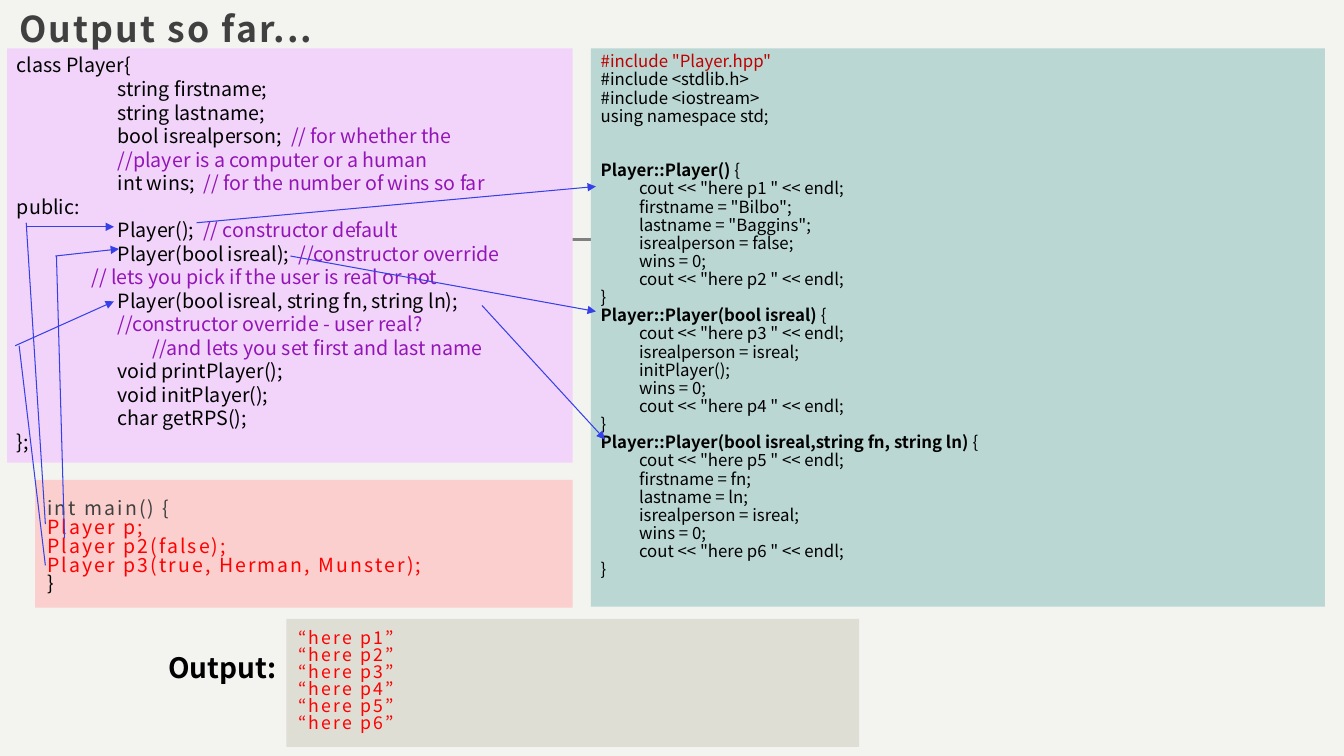
"""Build the slide that traces constructor calls to their output."""
from lxml.etree import SubElement
from pptx import Presentation
from pptx.dml.color import RGBColor
from pptx.enum.shapes import MSO_CONNECTOR, MSO_SHAPE
from pptx.enum.text import MSO_ANCHOR, PP_ALIGN
from pptx.oxml.ns import qn
from pptx.util import Inches, Pt

FONT = "Noto Sans CJK JP"
BLACK, GREY, RED, DARK_RED = "000000", "404040", "FF0000", "C00000"
PURPLE, BLUE = "9315B7", "3540E8"
ROOMY = (0.12, 0.12, 0.12, 0.1)
SNUG = (0.1, 0.05, 0.1, 0.05)

HEADER_LINES = [
    (0, "class Player{", ""),
    (1, "string firstname;", ""),
    (1, "string lastname;", ""),
    (1, "bool isrealperson;  ", "// for whether the"),
    (1, "", "//player is a computer or a human"),
    (1, "int wins;  ", "// for the number of wins so far"),
    (0, "public:", ""),
    (1, "Player();  ", "// constructor default"),
    (1, "Player(bool isreal);  ", "//constructor override"),
    (0.74, "", "// lets you pick if the user is real or not"),
    (1, "Player(bool isreal, string fn, string ln);", ""),
    (1, "", "//constructor override - user real?"),
    (1.34, "", "//and lets you set first and last name"),
    (1, "void printPlayer();", ""),
    (1, "void initPlayer();", ""),
    (1, "char getRPS();", ""),
    (0, "};", ""),
]
INCLUDES = ['#include "Player.hpp"', "#include <stdlib.h>", "#include <iostream>", "using namespace std;"]
CONSTRUCTORS = [
    ("Player::Player() ", [
        'cout << "here p1 " << endl;', 'firstname = "Bilbo";', 'lastname = "Baggins";',
        "isrealperson = false;", "wins = 0;", 'cout << "here p2 " << endl;']),
    ("Player::Player(bool isreal) ", [
        'cout << "here p3 " << endl;', "isrealperson = isreal;", "initPlayer();",
        "wins = 0;", 'cout << "here p4 " << endl;']),
    ("Player::Player(bool isreal,string fn, string ln) ", [
        'cout << "here p5 " << endl;', "firstname = fn;", "lastname = ln;",
        "isrealperson = isreal;", "wins = 0;", 'cout << "here p6 " << endl;']),
]
MAIN_CALLS = ["Player p;", "Player p2(false);", "Player p3(true, Herman, Munster);"]
DEFINITION_ARROWS = [
    (1.95, 2.21, 5.91, 1.85), (2.88, 2.54, 5.91, 3.09), (4.78, 3.03, 6, 4.36),
]
CALL_ARROWS = [(0.27, 2.25, 1.13, 2.25), (0.55, 2.54, 1.18, 2.47), (0.15, 3.43, 1.13, 2.99)]
CALL_STEMS = [(0.26, 2.21, 0.45, 5.2), (0.56, 2.54, 0.64, 5.34), (0.19, 3.43, 0.45, 5.61)]


def color(value):
    return RGBColor.from_string(value)


def line(spans, indent=0, spacing=None, before=0):
    return {"spans": spans, "indent": indent, "spacing": spacing, "before": before}


def write(box, lines, size, tracking=0, insets=SNUG, anchor=MSO_ANCHOR.TOP, wrap=True):
    frame = box.text_frame
    frame.word_wrap = wrap
    frame.vertical_anchor = anchor
    frame.margin_left, frame.margin_top, frame.margin_right, frame.margin_bottom = map(Inches, insets)
    for number, item in enumerate(lines):
        para = frame.add_paragraph() if number else frame.paragraphs[0]
        para.alignment = PP_ALIGN.LEFT
        para.space_before = Pt(item["before"])
        if item["spacing"]:
            para.line_spacing = item["spacing"]
        if item["indent"]:
            properties = para._p.get_or_add_pPr()
            properties.set("marL", str(Inches(item["indent"])))
            properties.set("indent", "0")
        for text, ink, bold in item["spans"]:
            span = para.add_run()
            span.text = text
            span.font.name, span.font.size, span.font.bold = FONT, Pt(size), bold
            span.font.color.rgb = color(ink)
            if tracking:
                span._r.get_or_add_rPr().set("spc", str(int(tracking * 100)))


def add_panel(page, place, fill):
    panel = page.shapes.add_shape(MSO_SHAPE.RECTANGLE, *map(Inches, place))
    panel.shadow.inherit = False
    panel.fill.solid()
    panel.fill.fore_color.rgb = color(fill)
    panel.line.fill.background()
    return panel


def add_label(page, place):
    return page.shapes.add_textbox(*map(Inches, place))


def add_line(page, ends, ink=BLUE, width=0.75, arrow=False):
    link = page.shapes.add_connector(MSO_CONNECTOR.STRAIGHT, *map(Inches, ends))
    link.line.color.rgb = color(ink)
    link.line.width = Pt(width)
    if arrow:
        SubElement(link.line._get_or_add_ln(), qn("a:tailEnd"), type="triangle")
    SubElement(link._element.spPr, qn("a:effectLst"))


def header_lines():
    return [
        line([(text, ink, False) for text, ink in ((code, BLACK), (note, PURPLE)) if text], indent)
        for indent, code, note in HEADER_LINES
    ]


def source_lines():
    lines = [line([(text, BLACK if number else DARK_RED, False)], spacing=0.9)
             for number, text in enumerate(INCLUDES)]
    for number, (signature, body) in enumerate(CONSTRUCTORS):
        lines.append(line([(signature, BLACK, True), ("{", BLACK, False)],
                          spacing=0.9, before=0 if number else 26))
        lines += [line([(text, BLACK, False)], 0.38, 0.9) for text in body]
        lines.append(line([("}", BLACK, False)], spacing=0.9))
    return lines


def main_lines():
    calls = [line([(text, RED, False)], spacing=0.8) for text in MAIN_CALLS]
    opening = line([("int main() {", GREY, False)], spacing=1.2, before=9.3)
    return [opening, *calls, line([("}", BLACK, False)], spacing=0.8)]


def main():
    deck = Presentation()
    deck.slide_width, deck.slide_height = Inches(13.33), Inches(7.5)
    page = deck.slides.add_slide(deck.slide_layouts[6])
    page.background.fill.solid()
    page.background.fill.fore_color.rgb = color("F3F3F0")

    add_line(page, (2.1, 2.38, 11.69, 2.38), "808080", 2)
    write(add_panel(page, (0.07, 0.48, 5.61, 4.11), "F2D4FA"), header_lines(), 14)
    write(add_panel(page, (5.86, 0.48, 7.28, 5.54), "BAD7D3"), source_lines(), 12)
    for ends in DEFINITION_ARROWS:
        add_line(page, ends, arrow=True)
    write(add_label(page, (0.07, -0.07, 3.64, 0.66)), [line([("Output so far...", GREY, True)])],
          25.4, 1.5, ROOMY, MSO_ANCHOR.BOTTOM)
    write(add_panel(page, (0.35, 4.76, 5.33, 1.27), "FACFCE"), main_lines(), 13.9, 1.5, ROOMY)
    for arrow, stem in zip(CALL_ARROWS, CALL_STEMS):
        add_line(page, arrow, arrow=True)
        add_line(page, stem)
    printed = [line([(f"“here p{number}”", RED, False)], spacing=0.8) for number in range(1, 7)]
    write(add_panel(page, (2.84, 6.14, 5.68, 1.27), "DEDED5"), printed, 12.6, 1.5, ROOMY)
    write(add_label(page, (1.57, 6.4, 1.35, 0.44)), [line([("Output:", BLACK, True)])], 20, wrap=False)

    deck.save("out.pptx")


if __name__ == "__main__":
    main()
